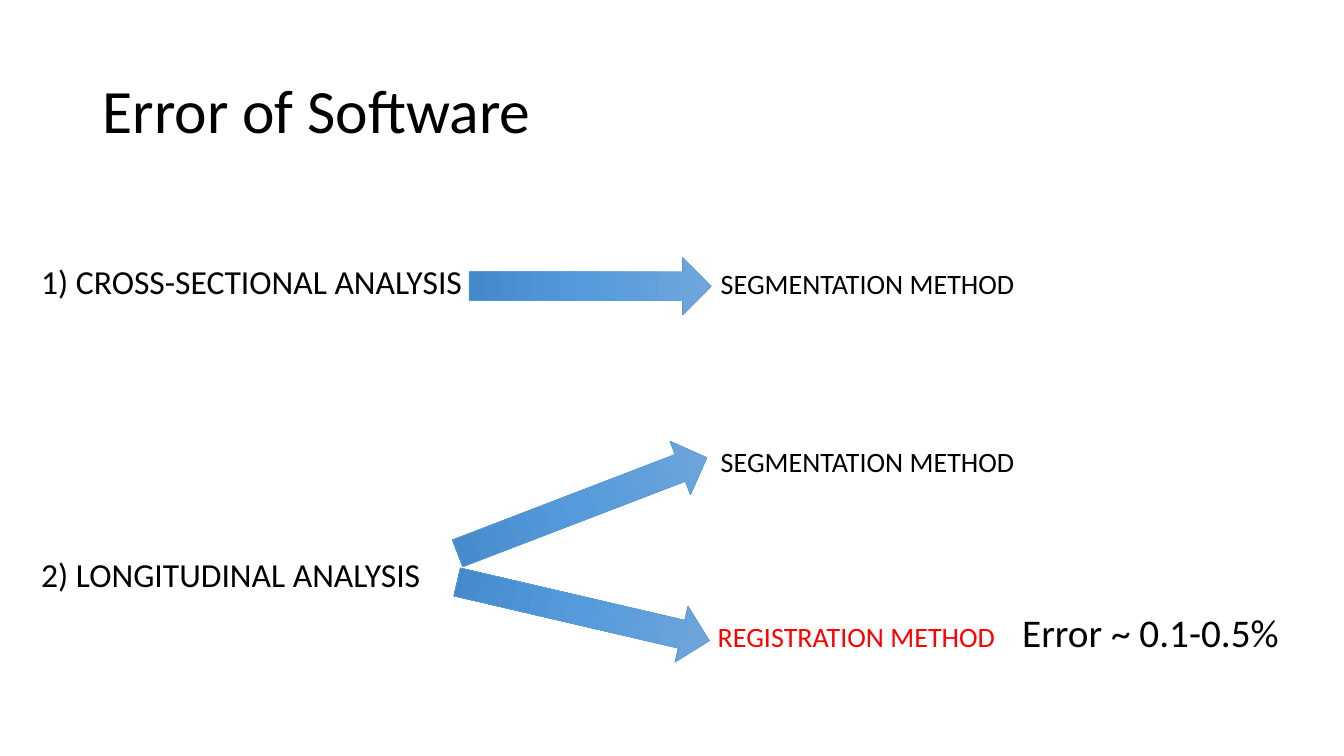
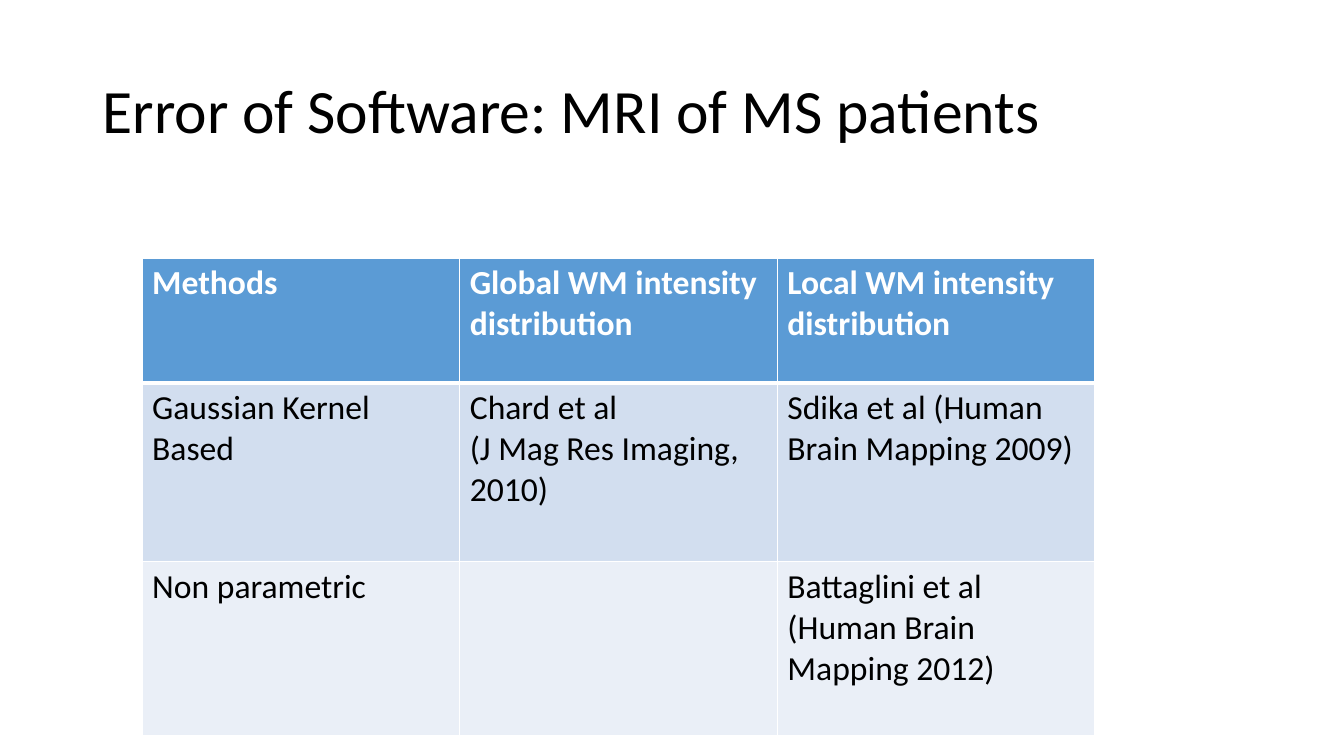
from copy import deepcopy
from dataclasses import dataclass

from lxml import etree
from pptx import Presentation
from pptx.dml.color import RGBColor
from pptx.enum.shapes import MSO_SHAPE
from pptx.enum.text import MSO_ANCHOR
from pptx.oxml.ns import qn
from pptx.util import Pt

PX = 9144
ARROW = MSO_SHAPE.UP_ARROW
TOP = MSO_ANCHOR.TOP
MIDDLE = MSO_ANCHOR.MIDDLE


@dataclass(frozen=True)
class Theme:
    font: str = "Calibri"
    black: str = "000000"
    white: str = "FFFFFF"
    red: str = "FF0000"
    blue: str = "5B9BD5"
    bands: tuple = ("5B9BD5", "D2DEEF", "EAEFF7")
    shades: tuple = ("71A6DB", "559BDB", "448ACA")
    title: int = 44
    note: int = 28
    body: int = 24
    label: int = 20


theme = Theme()


def style(frame, size, color, bold=False):
    for para in frame.paragraphs:
        para.font.name = theme.font
        para.font.size = Pt(size)
        para.font.bold = bold
        para.font.color.rgb = RGBColor.from_string(color)


def write(slide, text, box, size, color=theme.black, anchor=MIDDLE, wrap=True):
    frame = slide.shapes.add_textbox(*(n * PX for n in box)).text_frame
    frame.word_wrap = wrap
    frame.vertical_anchor = anchor
    frame.text = text
    style(frame, size, color)
    return frame


prs = Presentation()
prs.slide_width = 1333 * PX
prs.slide_height = 750 * PX

slides = []
for text in ("Error of Software", "Error of Software: MRI of MS patients"):
    slide = prs.slides.add_slide(prs.slide_layouts[6])
    title = write(slide, text, (92, 40, 1150, 145), theme.title)
    title.paragraphs[0].line_spacing = 0.9
    slides.append(slide)
flow, grid = slides

for text, top in (("1) CROSS-SECTIONAL ANALYSIS", 216), ("2) LONGITUDINAL ANALYSIS", 507)):
    write(flow, text, (31, top, 438, 125), theme.body)

for text, left, top, color in (
    ("SEGMENTATION METHOD", 705, 219, theme.black),
    ("SEGMENTATION METHOD", 705, 395, theme.black),
    ("REGISTRATION METHOD", 702, 569, theme.red),
):
    write(flow, text, (left, top, 398, 125), theme.label, color)

write(flow, "Error ~ 0.1-0.5%", (1004, 599, 278, 57), theme.note, anchor=TOP, wrap=False)

for left, top, height, turn in ((557, 164, 240, 90), (549, 369, 265, 69), (550, 478, 257, 103.1)):
    arrow = flow.shapes.add_shape(ARROW, left * PX, top * PX, 57 * PX, height * PX)
    arrow.rotation = turn
    arrow.shadow.inherit = False
    arrow.line.color.rgb = RGBColor.from_string(theme.blue)
    arrow.line.width = Pt(0.5)
    arrow.fill.gradient()
    arrow.fill.gradient_angle = 270
    stops = next(arrow.element.iter(qn("a:gsLst")))
    stops.append(deepcopy(stops[0]))
    for i, stop in enumerate(arrow.fill.gradient_stops):
        stop.position = i / 2
        stop.color.rgb = RGBColor.from_string(theme.shades[i])

rows = (
    ("Methods", "Global WM intensity distribution", "Local WM intensity distribution"),
    ("Gaussian Kernel Based", "Chard et al\n(J Mag Res Imaging, 2010)", "Sdika et al (Human Brain Mapping 2009)"),
    ("Non parametric", "", "Battaglini et al (Human Brain Mapping 2012)"),
)
highs = (124, 177, 173)
table = grid.shapes.add_table(3, 3, 141 * PX, 256 * PX, 945 * PX, sum(highs) * PX).table
for col in table.columns:
    col.width = 315 * PX
for r, texts in enumerate(rows):
    table.rows[r].height = highs[r] * PX
    head = r == 0
    for c, text in enumerate(texts):
        cell = table.cell(r, c)
        cell.text = text
        style(cell.text_frame, theme.body, theme.white if head else theme.black, head)
        props = cell._tc.get_or_add_tcPr()
        for side in ("lnL", "lnR", "lnT", "lnB"):
            thick = (head and side == "lnB") or (r == 1 and side == "lnT")
            edge = etree.SubElement(props, qn("a:" + side), w=str(Pt(3 if thick else 1)))
            paint = etree.SubElement(edge, qn("a:solidFill"))
            etree.SubElement(paint, qn("a:srgbClr"), val=theme.white)
        cell.fill.solid()
        cell.fill.fore_color.rgb = RGBColor.from_string(theme.bands[r])

prs.save("out.pptx")
